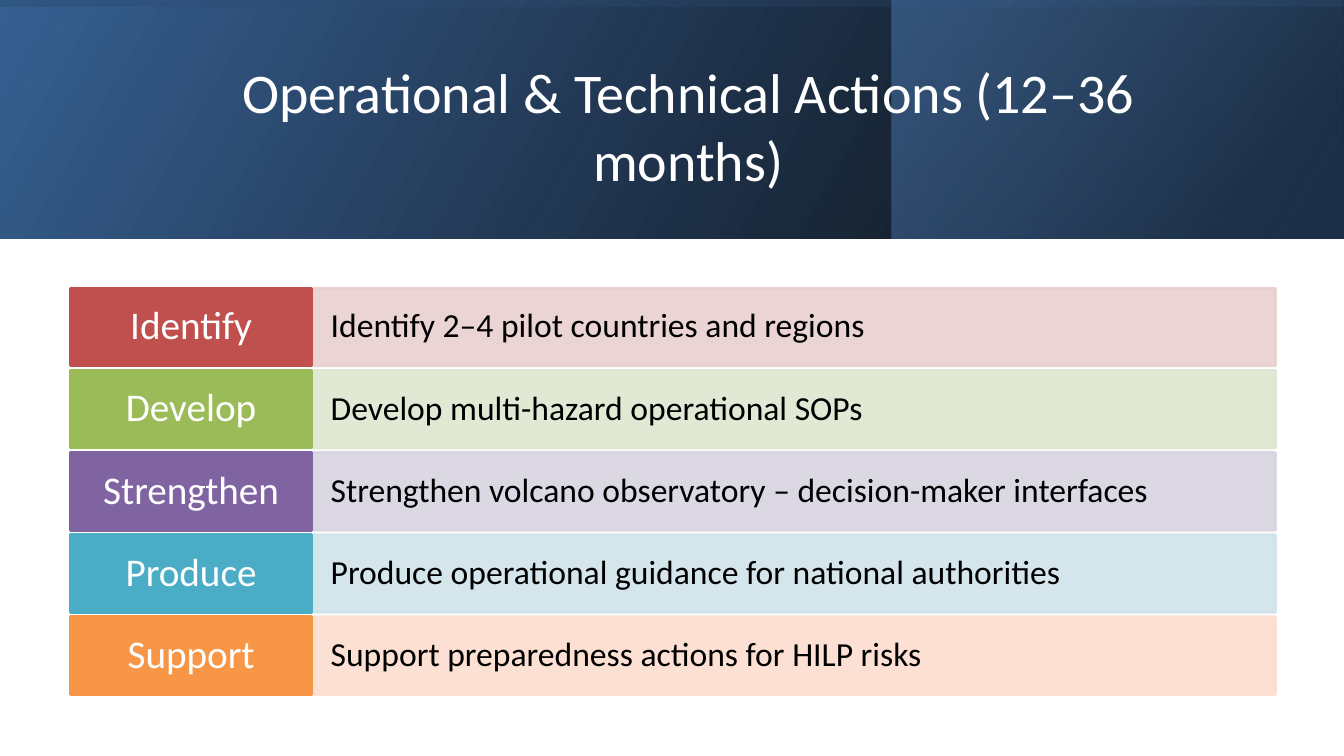
from typing import NamedTuple

from pptx import Presentation
from pptx.dml.color import RGBColor
from pptx.enum.shapes import MSO_SHAPE as Shape
from pptx.enum.text import MSO_ANCHOR as Anchor, PP_ALIGN as Align
from pptx.oxml.ns import qn
from pptx.util import Inches, Pt

FONT = "Calibri"
WHITE = RGBColor(0xFF, 0xFF, 0xFF)
BLACK = RGBColor(0, 0, 0)
BLUE = RGBColor(0x37, 0x60, 0x92)
NAVY = RGBColor(0x25, 0x40, 0x61)
SKY = RGBColor(0x4F, 0x81, 0xBD)
RED, PINK = RGBColor(0xC0, 0x50, 0x4D), RGBColor(0xE8, 0xD0, 0xD0)
GREEN, SAGE = RGBColor(0x9B, 0xBB, 0x59), RGBColor(0xDE, 0xE7, 0xD1)
PURPLE, LILAC = RGBColor(0x80, 0x64, 0xA2), RGBColor(0xD8, 0xD3, 0xE0)
TEAL, ICE = RGBColor(0x4B, 0xAC, 0xC6), RGBColor(0xD0, 0xE3, 0xEA)
ORANGE, PEACH = RGBColor(0xF7, 0x96, 0x46), RGBColor(0xFC, 0xDD, 0xCF)

# Grid of the action rows
TOP, LAST, HIGH = 2.86, 6.12, 0.77
TAG_X, TAG_W = 0.7, 2.39
BAR_X, BAR_W = TAG_X + TAG_W, 9.56


class Box(NamedTuple):
    x: float
    y: float
    w: float
    h: float


class Stop(NamedTuple):
    pos: float
    color: RGBColor
    alpha: int


class Layer(NamedTuple):
    box: Box
    turn: int
    angle: int
    stops: tuple[Stop, Stop]


class Action(NamedTuple):
    verb: str
    text: str
    dark: RGBColor
    pale: RGBColor


class Style(NamedTuple):
    size: int
    color: RGBColor
    align: Align
    pad_x: float
    pad_y: float
    space: float


LAYERS = [
    Layer(Box(0, 0, 13.33, 2.37), 0, 330,
          (Stop(0, BLACK, 96), Stop(1, BLUE, 100))),
    Layer(Box(8.84, 0, 4.48, 2.37), 0, 320,
          (Stop(0.19, NAVY, 68), Stop(1, SKY, 48))),
    Layer(Box(5.48, -5.48, 2.37, 13.33), 270, 350,
          (Stop(0.23, BLUE, 16), Stop(0.99, BLACK, 45))),
]
# The first layer is solid at its blue end
ACTIONS = [
    Action("Identify", "Identify 2–4 pilot countries and regions", RED, PINK),
    Action("Develop", "Develop multi-hazard operational SOPs", GREEN, SAGE),
    Action("Strengthen",
           "Strengthen volcano observatory – decision-maker interfaces",
           PURPLE, LILAC),
    Action("Produce", "Produce operational guidance for national authorities",
           TEAL, ICE),
    Action("Support", "Support preparedness actions for HILP risks",
           ORANGE, PEACH),
]
HEAD = Style(40, WHITE, Align.CENTER, 0.1, 0.05, 1)
TAG = Style(28, WHITE, Align.CENTER, 0.13, 0.08, 0.9)
BAR = Style(24, BLACK, Align.LEFT, 0.19, 0.2, 0.9)


def add_rect(slide, box: Box):
    rect = slide.shapes.add_shape(Shape.RECTANGLE, *map(Inches, box))
    rect.shadow.inherit = False
    return rect


def set_alpha(color, alpha: int) -> None:
    if alpha < 100:
        node = color.makeelement(qn("a:alpha"), {"val": str(alpha * 1000)})
        color.append(node)


def write(shape, text: str, style: Style) -> None:
    frame = shape.text_frame
    frame.word_wrap = True
    frame.vertical_anchor = Anchor.MIDDLE
    frame.margin_left = frame.margin_right = Inches(style.pad_x)
    frame.margin_top = frame.margin_bottom = Inches(style.pad_y)
    para = frame.paragraphs[0]
    para.alignment = style.align
    para.line_spacing = style.space
    run = para.add_run()
    run.text = text
    run.font.name = FONT
    run.font.size = Pt(style.size)
    run.font.color.rgb = style.color


def add_layer(slide, layer: Layer) -> None:
    rect = add_rect(slide, layer.box)
    rect.rotation = layer.turn
    rect.line.fill.background()
    rect.fill.gradient()
    rect.fill.gradient_angle = 360 - layer.angle
    for part, stop in zip(rect.fill.gradient_stops, layer.stops):
        part.position = stop.pos
        part.color.rgb = stop.color
    # Mirror the shape and make its stops translucent
    props = rect._element.spPr
    props.find(qn("a:xfrm")).set("flipH", "1")
    for color, stop in zip(props.iter(qn("a:srgbClr")), layer.stops):
        set_alpha(color, stop.alpha)


def add_cell(slide, box: Box, color: RGBColor, alpha: int,
             text: str, style: Style) -> None:
    rect = add_rect(slide, box)
    rect.fill.solid()
    rect.fill.fore_color.rgb = color
    rect.line.color.rgb = color
    rect.line.width = Pt(2)
    for node in rect._element.spPr.iter(qn("a:srgbClr")):
        set_alpha(node, alpha)
    write(rect, text, style)


def main() -> None:
    deck = Presentation()
    deck.slide_width, deck.slide_height = Inches(13.33), Inches(7.5)
    slide = deck.slides.add_slide(deck.slide_layouts[6])

    # Header band and title
    for layer in LAYERS:
        add_layer(slide, layer)
    title = slide.shapes.add_textbox(*map(Inches, Box(1.51, 0.38, 10.63, 1.72)))
    write(title, "Operational & Technical Actions (12–36 months)", HEAD)

    # Action rows
    pitch = (LAST - TOP) / (len(ACTIONS) - 1)
    for i, act in enumerate(ACTIONS):
        y = TOP + i * pitch
        add_cell(slide, Box(BAR_X, y, BAR_W, HIGH), act.pale, 90, act.text, BAR)
        add_cell(slide, Box(TAG_X, y, TAG_W, HIGH), act.dark, 100, act.verb, TAG)

    deck.save("out.pptx")


if __name__ == "__main__":
    main()
